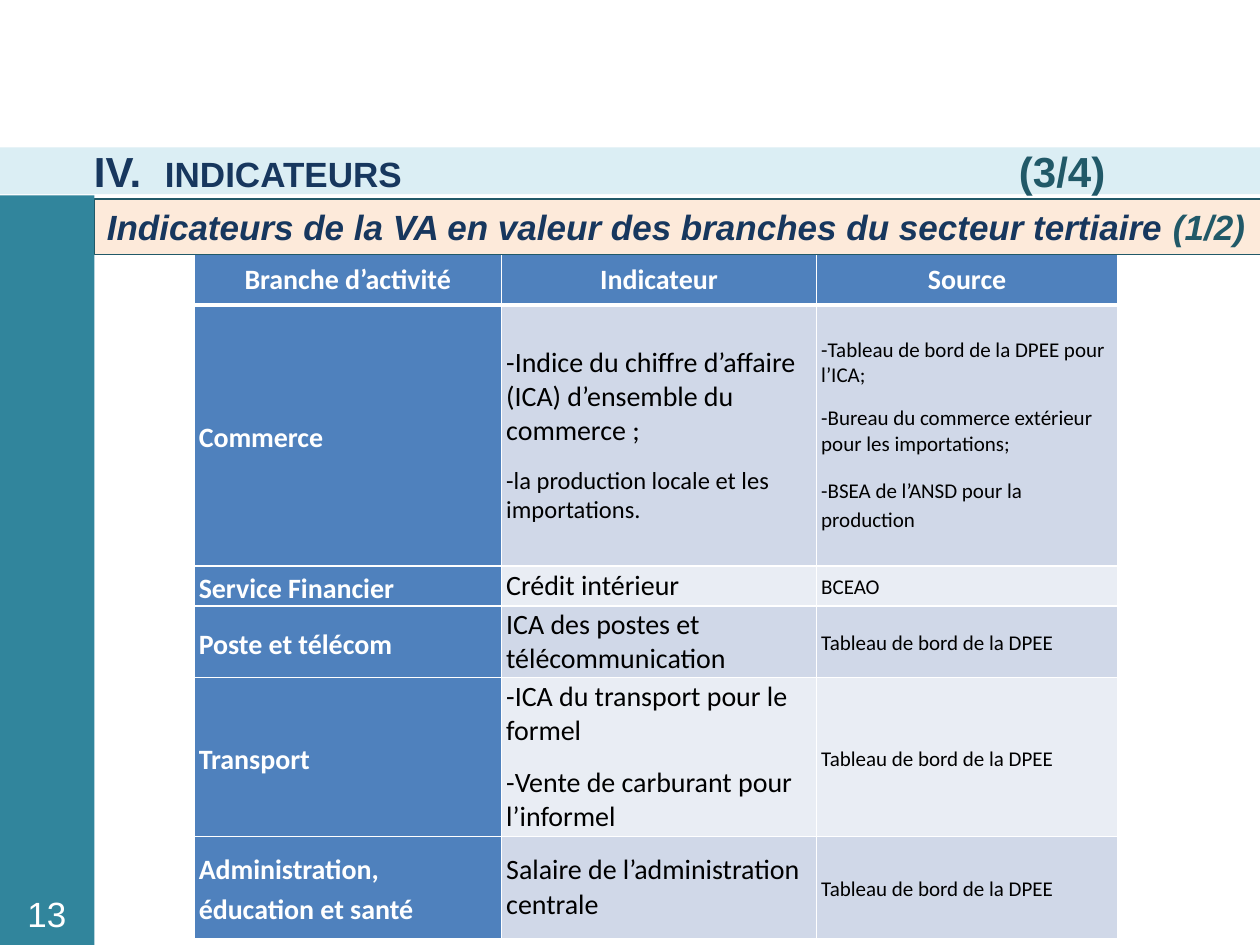
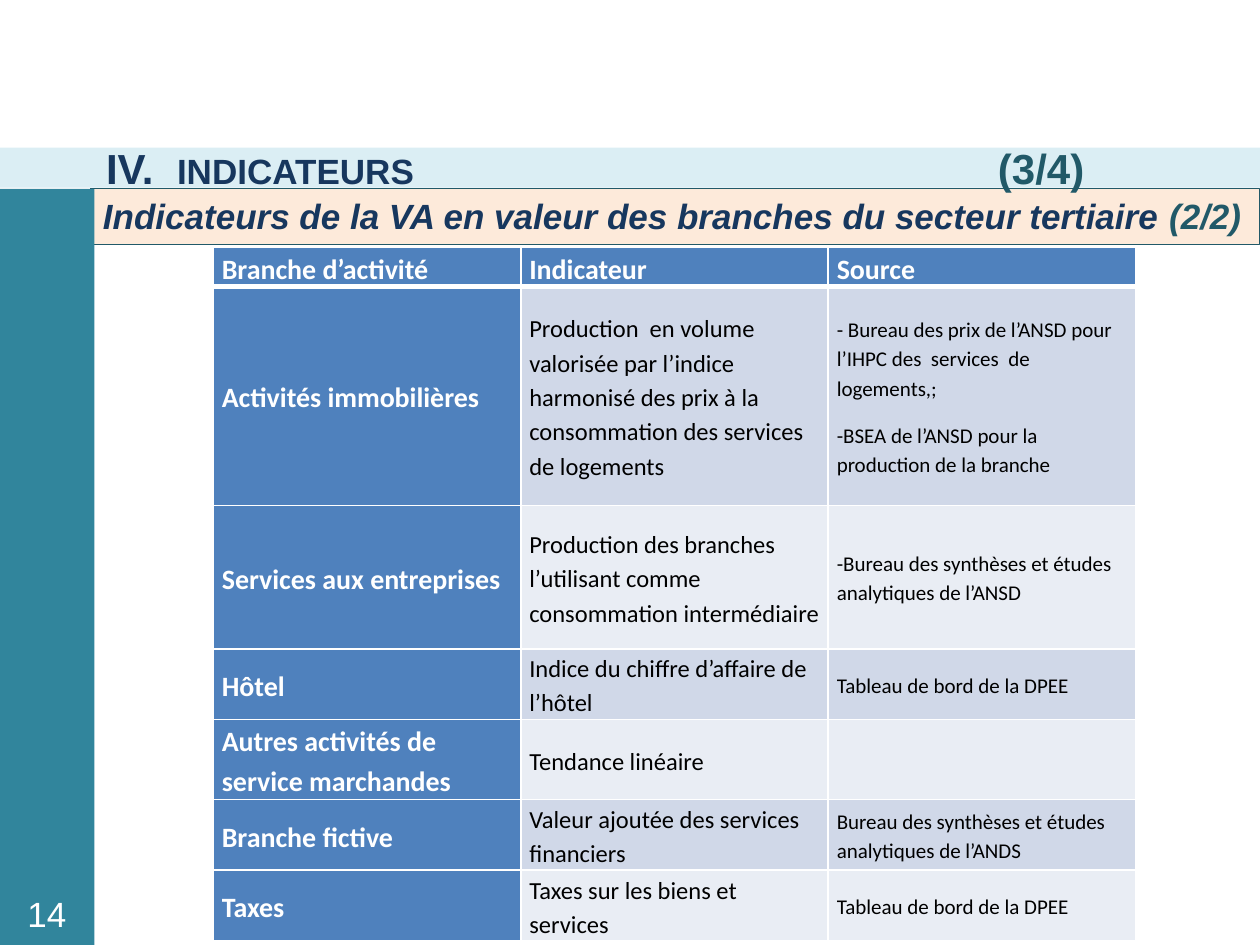
import pptx
import pptx.util
import pptx.dml.color
import pptx.enum.shapes
import pptx.enum.text
import pptx.oxml
import pptx.oxml.ns
from lxml import etree

Pt = pptx.util.Pt
RGBColor = pptx.dml.color.RGBColor
ALIGN = pptx.enum.text.PP_ALIGN
MIDDLE = pptx.enum.text.MSO_ANCHOR.MIDDLE
TOP = pptx.enum.text.MSO_ANCHOR.TOP

WHITE = RGBColor(0xFF, 0xFF, 0xFF)
BLACK = RGBColor(0, 0, 0)
TEAL = RGBColor(0x31, 0x85, 0x9C)
DARK_TEAL = RGBColor(0x21, 0x59, 0x68)
PALE_TEAL = RGBColor(0xDB, 0xEE, 0xF4)
NAVY = RGBColor(0x17, 0x37, 0x5E)
PEACH = RGBColor(0xFD, 0xEA, 0xDA)
BLUE = RGBColor(0x4F, 0x81, 0xBD)
BANDS = (RGBColor(0xE9, 0xED, 0xF4), RGBColor(0xD0, 0xD8, 0xE8))

SLIDE_WIDTH, SLIDE_HEIGHT = 720, 540
SIDEBAR_WIDTH = 54
TITLE_TOP = 84.3
SUBTITLE = "Indicateurs de la VA en valeur des branches du secteur tertiaire "
DASHBOARD = "Tableau de bord de la DPEE"
HEADERS = ["Branche d’activité", "Indicateur", "Source"]

SLIDES = [
    {
        "number": "13",
        "part": "(1/2)",
        "title_height": 26.7,
        "title_left": 53.7,
        "title_tabs": (40.6, 528.6),
        "sidebar_top": 111.6,
        "subtitle_at": (54, 113.8, 668, 31.7),
        "subtitle_in_front": True,
        "table_at": (110.9, 142.6),
        "columns": (175.7, 180, 172.1),
        "row_heights": (31.7, 149, 23, 41, 90.7, 58.3),
        "inset": 2.7,
        "header_align": ALIGN.CENTER,
        "sizes": (16, 16, 12),
        "spacings": (1.15, 1, 1.15),
        "rows": [
            [
                ["Commerce"],
                ["-Indice du chiffre d’affaire (ICA) d’ensemble du commerce ;",
                 ("-la production locale et les importations.", 14, 1)],
                [("-Tableau de bord de la DPEE pour l’ICA;", 12, 1),
                 ("-Bureau du commerce extérieur pour les importations;", 12, 1),
                 "-BSEA de l’ANSD pour la production"],
            ],
            [["Service Financier"], ["Crédit intérieur"], ["BCEAO"]],
            [["Poste et télécom"], ["ICA des postes et télécommunication"], [DASHBOARD]],
            [
                ["Transport"],
                ["-ICA du transport pour le formel", "-Vente de carburant pour l’informel"],
                [DASHBOARD],
            ],
            [
                ["Administration, éducation et santé"],
                ["Salaire de l’administration centrale"],
                [DASHBOARD],
            ],
        ],
    },
    {
        "number": "14",
        "part": "(2/2)",
        "title_height": 23,
        "title_left": 60.6,
        "title_tabs": (40.6, 509.7),
        "sidebar_top": 108,
        "subtitle_at": (51.8, 107.9, 668, 31.7),
        "subtitle_in_front": False,
        "table_at": (121.9, 141.3),
        "columns": (175.7, 175.7, 175.7),
        "row_heights": (22.3, 125.2, 82, 40.3, 46, 40.3, 40.3),
        "inset": 4.9,
        "header_align": ALIGN.LEFT,
        "sizes": (16, 14, 12),
        "spacings": (1.15, 1.15, 1.15),
        "rows": [
            [
                ["Activités immobilières"],
                ["Production  en volume valorisée par l’indice harmonisé des prix "
                 "à la consommation des services de logements"],
                ["- Bureau des prix de l’ANSD pour l’IHPC des  services  de logements,;",
                 "-BSEA de l’ANSD pour la production de la branche"],
            ],
            [
                ["Services aux entreprises"],
                ["Production des branches l’utilisant comme consommation intermédiaire"],
                ["-Bureau des synthèses et études analytiques de l’ANSD"],
            ],
            [["Hôtel"], ["Indice du chiffre d’affaire de l’hôtel"], [DASHBOARD]],
            [["Autres activités de service marchandes"], ["Tendance linéaire"], []],
            [
                ["Branche fictive"],
                ["Valeur ajoutée des services financiers"],
                ["Bureau des synthèses et études analytiques de l’ANDS"],
            ],
            [["Taxes"], ["Taxes sur les biens et services"], [DASHBOARD]],
        ],
    },
]


def add_run(paragraph, text, size=20, color=NAVY, font="Arial", bold=True, italic=False):
    run = paragraph.add_run()
    run.text = text
    run.font.size = Pt(size)
    run.font.name = font
    run.font.bold = bold
    run.font.italic = italic
    run.font.color.rgb = color


def add_band(slide, left, top, width, height, fill, line=None):
    shape = slide.shapes.add_shape(
        pptx.enum.shapes.MSO_SHAPE.RECTANGLE, Pt(left), Pt(top), Pt(width), Pt(height))
    shape.shadow.inherit = False
    shape.fill.solid()
    shape.fill.fore_color.rgb = fill
    if line is None:
        shape.line.fill.background()
    else:
        shape.line.color.rgb = line
        shape.line.width = Pt(0.75)
    return shape


def first_paragraph(shape, align, anchor):
    frame = shape.text_frame
    frame.word_wrap = True
    frame.vertical_anchor = anchor
    frame.margin_right = 0
    paragraph = frame.paragraphs[0]
    paragraph.alignment = align
    return paragraph


def add_subtitle(slide, content):
    shape = add_band(slide, *content["subtitle_at"], PEACH, DARK_TEAL)
    paragraph = first_paragraph(shape, ALIGN.LEFT, TOP)
    add_run(paragraph, SUBTITLE, italic=True)
    add_run(paragraph, content["part"], color=DARK_TEAL, italic=True)


def add_sidebar(slide, content):
    top = content["sidebar_top"]
    add_band(slide, 0, top, SIDEBAR_WIDTH, SLIDE_HEIGHT - top, TEAL)
    box = slide.shapes.add_textbox(Pt(2.2), Pt(507.6), Pt(49), Pt(28.8))
    paragraph = first_paragraph(box, ALIGN.CENTER, MIDDLE)
    box.text_frame.margin_left = 0
    add_run(paragraph, content["number"], color=WHITE, bold=False)


def add_title(slide, content):
    shape = add_band(slide, 0, TITLE_TOP, SLIDE_WIDTH, content["title_height"], PALE_TEAL)
    paragraph = first_paragraph(shape, ALIGN.LEFT, MIDDLE)
    shape.text_frame.margin_left = Pt(content["title_left"])
    properties = paragraph._p.get_or_add_pPr()
    tabs = etree.SubElement(properties, pptx.oxml.ns.qn("a:tabLst"))
    for position in content["title_tabs"]:
        etree.SubElement(tabs, pptx.oxml.ns.qn("a:tab"), pos=str(Pt(position)), algn="l")
    add_run(paragraph, "IV.\t", size=24)
    add_run(paragraph, "INDICATEURS\t")
    add_run(paragraph, "(3/4)", size=24, color=DARK_TEAL)


def set_borders(cell, is_header):
    properties = cell._tc.get_or_add_tcPr()
    for side in ("L", "R", "T", "B"):
        width = 3 if is_header and side == "B" else 1
        line = etree.SubElement(
            properties, pptx.oxml.ns.qn("a:ln" + side), w=str(Pt(width)))
        fill = etree.SubElement(line, pptx.oxml.ns.qn("a:solidFill"))
        etree.SubElement(fill, pptx.oxml.ns.qn("a:srgbClr"), val=str(WHITE))


def fill_cell(cell, entries, row, column, content):
    is_header = row == 0
    is_label = is_header or column == 0
    set_borders(cell, is_header)
    cell.fill.solid()
    cell.fill.fore_color.rgb = BLUE if is_label else BANDS[row % 2]
    cell.vertical_anchor = MIDDLE
    cell.margin_left = cell.margin_right = Pt(content["inset"])
    cell.margin_top = cell.margin_bottom = 0
    size = 16 if is_header else content["sizes"][column]
    spacing = 1.15 if is_header else content["spacings"][column]
    for index, entry in enumerate(entries):
        text, text_size, line_spacing = (
            entry if isinstance(entry, tuple) else (entry, size, spacing))
        frame = cell.text_frame
        paragraph = frame.add_paragraph() if index else frame.paragraphs[0]
        paragraph.alignment = content["header_align"] if is_header else ALIGN.LEFT
        paragraph.line_spacing = line_spacing
        paragraph.space_after = Pt(10)
        add_run(paragraph, text, size=text_size, font="Calibri",
                color=WHITE if is_label else BLACK, bold=is_label)


def add_indicator_table(slide, content):
    rows = [[[header] for header in HEADERS]] + content["rows"]
    left, top = content["table_at"]
    widths, heights = content["columns"], content["row_heights"]
    table = slide.shapes.add_table(
        len(rows), len(HEADERS), Pt(left), Pt(top), Pt(sum(widths)), Pt(sum(heights))).table
    table.horz_banding = False
    for column, width in zip(table.columns, widths):
        column.width = Pt(width)
    for row_index, row in enumerate(rows):
        table.rows[row_index].height = Pt(heights[row_index])
        for column_index, entries in enumerate(row):
            cell = table.cell(row_index, column_index)
            fill_cell(cell, entries, row_index, column_index, content)


def main():
    presentation = pptx.Presentation()
    presentation.slide_width = Pt(SLIDE_WIDTH)
    presentation.slide_height = Pt(SLIDE_HEIGHT)
    for content in SLIDES:
        slide = presentation.slides.add_slide(presentation.slide_layouts[6])
        layers = [add_sidebar, add_title, add_indicator_table]
        layers.insert(len(layers) if content["subtitle_in_front"] else 0, add_subtitle)
        for add_layer in layers:
            add_layer(slide, content)
    presentation.save("out.pptx")


if __name__ == "__main__":
    main()
